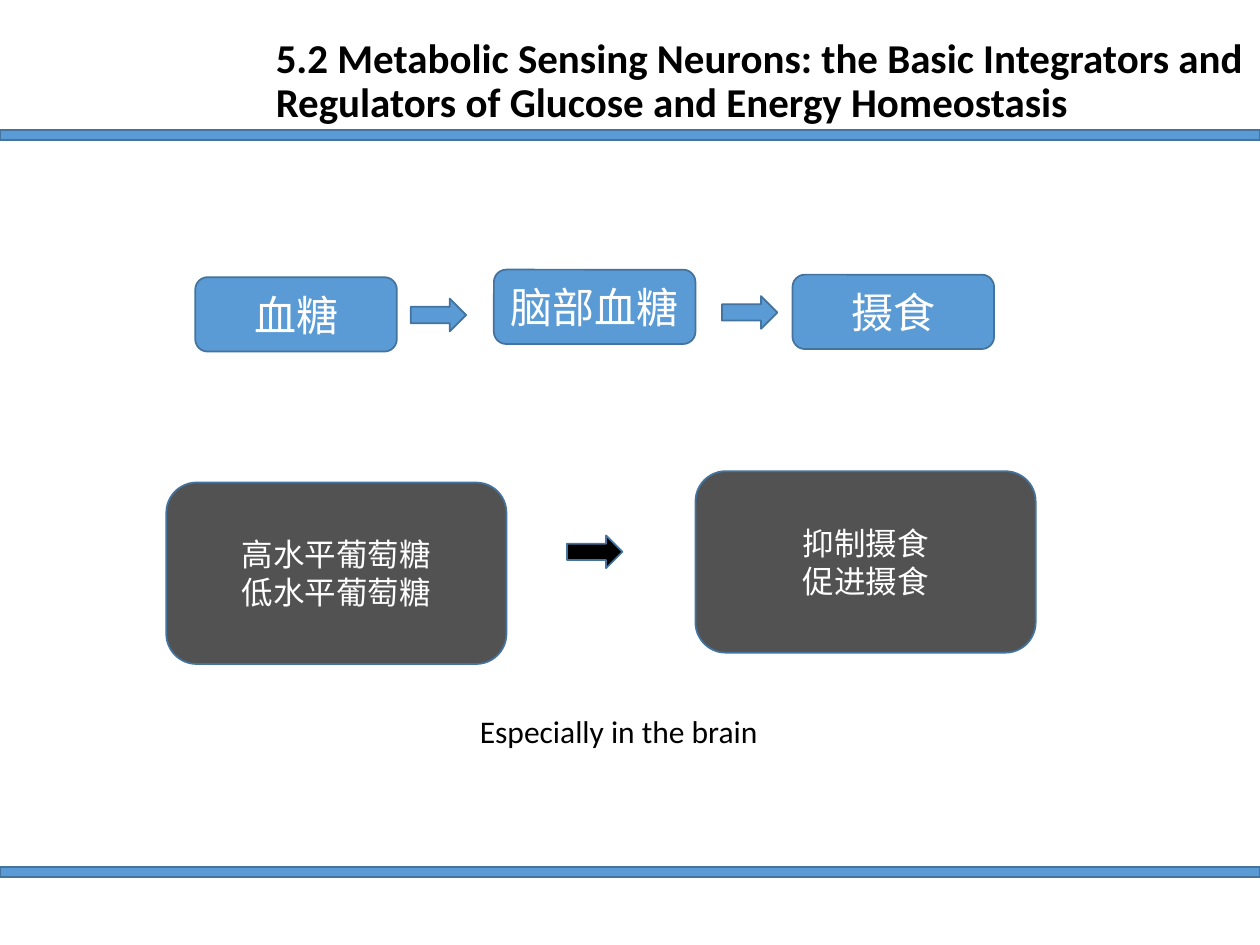
from pptx import Presentation
from pptx.dml.color import RGBColor
from pptx.enum.shapes import MSO_SHAPE
from pptx.enum.text import MSO_ANCHOR, MSO_AUTO_SIZE, PP_ALIGN
from pptx.util import Inches, Pt

BLUE = RGBColor(0x5B, 0x9B, 0xD5)
OUTLINE = RGBColor(0x43, 0x73, 0x9E)
GREY = RGBColor(0x52, 0x52, 0x52)
BLACK = RGBColor(0, 0, 0)
WHITE = RGBColor(0xFF, 0xFF, 0xFF)

RECTANGLE = MSO_SHAPE.RECTANGLE
ROUNDED = MSO_SHAPE.ROUNDED_RECTANGLE
RIGHT_ARROW = MSO_SHAPE.RIGHT_ARROW
MIDDLE = MSO_ANCHOR.MIDDLE
TOP = MSO_ANCHOR.TOP
CENTER = PP_ALIGN.CENTER
LEFT = PP_ALIGN.LEFT
FIT_SHAPE = MSO_AUTO_SIZE.SHAPE_TO_FIT_TEXT

COLUMNS, ROWS = 100, 75
STEP_SIZE = (16, 5.9)
PANEL_SIZE = (27, 14.4)
ARROW_SIZE = (4.4, 2.6)
BAR_SIZE = (COLUMNS, 0.8)


class SlideBuilder:
    """Draws on one slide; positions are columns and rows of a 100 by 75 grid."""

    font_name = "Calibri"
    line_width = Pt(1)

    def __init__(self, presentation):
        self.column = presentation.slide_width / COLUMNS
        self.row = presentation.slide_height / ROWS
        self.slide = presentation.slides.add_slide(presentation.slide_layouts[6])

    def place(self, position, size):
        (left, top), (width, height) = position, size
        return (round(left * self.column), round(top * self.row),
                round(width * self.column), round(height * self.row))

    def add_lines(self, frame, lines, size, color, alignment=LEFT, bold=False, spacing=None):
        for index, line in enumerate(lines):
            paragraph = frame.paragraphs[0] if index == 0 else frame.add_paragraph()
            paragraph.alignment = alignment
            paragraph.line_spacing = spacing
            run = paragraph.add_run()
            run.text = line
            run.font.name = self.font_name
            run.font.size = Pt(size)
            run.font.bold = bold
            run.font.color.rgb = color

    def shape(self, kind, position, size, fill=BLUE):
        shape = self.slide.shapes.add_shape(kind, *self.place(position, size))
        shape.shadow.inherit = False
        shape.fill.solid()
        shape.fill.fore_color.rgb = fill
        shape.line.color.rgb = OUTLINE
        shape.line.width = self.line_width
        return shape

    def bar(self, top):
        self.shape(RECTANGLE, (0, top), BAR_SIZE)

    def arrow(self, position, fill=BLUE):
        self.shape(RIGHT_ARROW, position, ARROW_SIZE, fill)

    def box(self, position, size, lines, font_size, fill=BLUE):
        frame = self.shape(ROUNDED, position, size, fill).text_frame
        frame.word_wrap = True
        frame.vertical_anchor = MIDDLE
        self.add_lines(frame, lines, font_size, WHITE, CENTER)

    def text(self, position, size, line, font_size, anchor=TOP, wrap=True, **style):
        frame = self.slide.shapes.add_textbox(*self.place(position, size)).text_frame
        frame.word_wrap = wrap
        frame.vertical_anchor = anchor
        if not wrap:
            frame.auto_size = FIT_SHAPE
        self.add_lines(frame, [line], font_size, BLACK, **style)


def main():
    presentation = Presentation()
    presentation.slide_width = Inches(10)
    presentation.slide_height = Inches(7.5)
    builder = SlideBuilder(presentation)

    for top in (10.3, 68.8):
        builder.bar(top)
    builder.text((20.9, -0.7), (81.1, 14.5),
                 "5.2 Metabolic Sensing Neurons: the Basic Integrators and "
                 "Regulators of Glucose and Energy Homeostasis",
                 23.4, anchor=MIDDLE, bold=True, spacing=0.9)

    steps = [("血糖", 22), ("脑部血糖", 21.4), ("摄食", 21.8)]
    for index, (label, top) in enumerate(steps):
        builder.box((15.5 + 23.7 * index, top), STEP_SIZE, [label], 24)
    for position in ((32.6, 23.7), (57.3, 23.5)):
        builder.arrow(position)

    panels = [((13.2, 38.3), ["高水平葡萄糖", "低水平葡萄糖"]),
              ((55.2, 37.4), ["抑制摄食", "促进摄食"])]
    for position, lines in panels:
        builder.box(position, PANEL_SIZE, lines, 18, GREY)
    builder.arrow((45, 42.5), BLACK)

    builder.text((37.1, 56), (24.4, 4), "Especially in the brain", 18, wrap=False)
    presentation.save("out.pptx")


if __name__ == "__main__":
    main()
